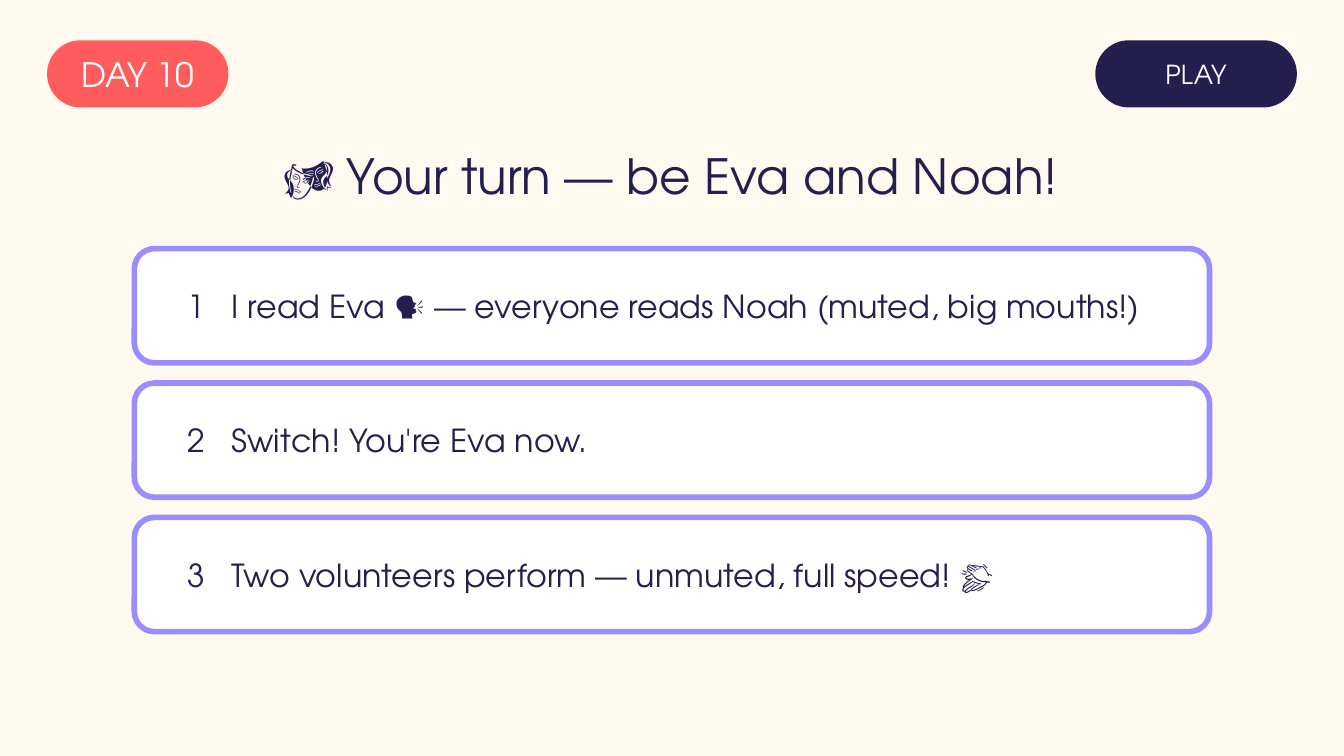
from lxml import etree
from pptx import Presentation
from pptx.dml.color import RGBColor
from pptx.enum.shapes import MSO_SHAPE
from pptx.enum.text import MSO_ANCHOR, PP_ALIGN
from pptx.oxml.ns import qn
from pptx.util import Pt

ROUNDED = MSO_SHAPE.ROUNDED_RECTANGLE
MIDDLE = MSO_ANCHOR.MIDDLE
LEFT, CENTER = PP_ALIGN.LEFT, PP_ALIGN.CENTER

CREAM = RGBColor(0xFF, 0xF9, 0xEF)
CORAL = RGBColor(0xFF, 0x5D, 0x5D)
NAVY = RGBColor(0x24, 0x1F, 0x4E)
LILAC = RGBColor(0x9B, 0x8C, 0xFF)
WHITE = RGBColor(0xFF, 0xFF, 0xFF)
FONT = "TeX Gyre Adventor"

# Content
TITLE = "🎭 Your turn — be Eva and Noah!"
STEPS = [
    "I read Eva 🗣️ — everyone reads Noah (muted, big mouths!)",
    "Switch! You're Eva now.",
    "Two volunteers perform — unmuted, full speed! 👏",
]
# Text, left, width, fill, text size
BADGES = [
    ("DAY 10", 25.2, 97.2, CORAL, 18),
    ("PLAY", 586.8, 108, NAVY, 14),
]

# Layout in points
SLIDE_WIDTH, SLIDE_HEIGHT = 720, 405
BADGE_TOP, BADGE_HEIGHT = 21.6, 36
CARD_LEFT, CARD_TOP, CARD_WIDTH, CARD_HEIGHT = 72, 133.2, 576, 61.2
CARD_PITCH = 72
CARD_RADIUS = 0.176
TEXT_LEFT, TEXT_WIDTH = 93.6, 547.2
NUMBER_TAB = 23.5


def add_pill(page, left, top, width, height, fill, radius=0.5, line=None):
    pill = page.shapes.add_shape(ROUNDED, Pt(left), Pt(top), Pt(width), Pt(height))
    pill.shadow.inherit = False
    pill.adjustments[0] = radius
    pill.fill.solid()
    pill.fill.fore_color.rgb = fill
    if line is None:
        pill.line.fill.background()
    else:
        pill.line.color.rgb = line
        pill.line.width = Pt(3)


def add_text(page, text, left, top, width, height, *, size, color=NAVY,
             align=CENTER, margin=None, tab=None):
    box = page.shapes.add_textbox(Pt(left), Pt(top), Pt(width), Pt(height))
    frame = box.text_frame
    frame.word_wrap = True
    frame.vertical_anchor = MIDDLE
    if margin is not None:
        frame.margin_left = frame.margin_right = Pt(margin)
        frame.margin_top = frame.margin_bottom = Pt(margin)
    para = frame.paragraphs[0]
    para.alignment = align
    if tab is not None:
        tabs = etree.SubElement(para._p.get_or_add_pPr(), qn("a:tabLst"))
        etree.SubElement(tabs, qn("a:tab"), pos=str(Pt(tab)), algn="l")
    span = para.add_run()
    span.text = text
    span.font.name = FONT
    span.font.size = Pt(size)
    span.font.color.rgb = color


deck = Presentation()
deck.slide_width, deck.slide_height = Pt(SLIDE_WIDTH), Pt(SLIDE_HEIGHT)
page = deck.slides.add_slide(deck.slide_layouts[6])
page.background.fill.solid()
page.background.fill.fore_color.rgb = CREAM

# Badges in the top corners
for label, left, width, fill, size in BADGES:
    area = (left, BADGE_TOP, width, BADGE_HEIGHT)
    add_pill(page, *area, fill)
    add_text(page, label, *area, size=size, color=WHITE, margin=0)

# Title
add_text(page, TITLE, 0, 68.4, SLIDE_WIDTH, 50.4, size=26)

# Numbered step cards
for index, step in enumerate(STEPS):
    top = CARD_TOP + index * CARD_PITCH
    add_pill(page, CARD_LEFT, top, CARD_WIDTH, CARD_HEIGHT, WHITE,
             radius=CARD_RADIUS, line=LILAC)
    add_text(page, f"{index + 1}\t{step}", TEXT_LEFT, top, TEXT_WIDTH, CARD_HEIGHT,
             size=17, align=LEFT, tab=NUMBER_TAB)

deck.save("out.pptx")
